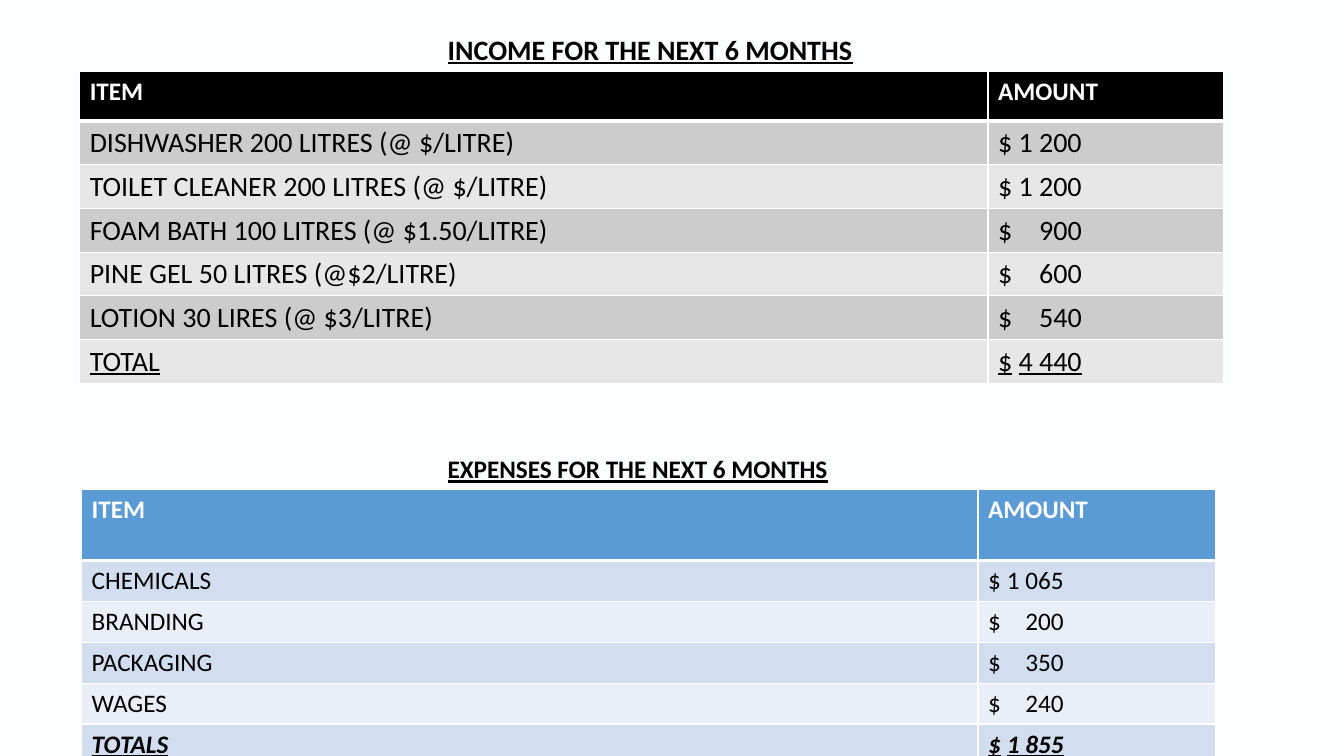
import pptx
import pptx.util
import pptx.dml.color
import pptx.enum.text
import pptx.oxml
import pptx.oxml.ns

COLORS = {
    "page": "FBFDFE", "text": "000000", "white": "FFFFFF",
    "income": ("000000", "CCCCCC", "E7E7E7"),
    "expenses": ("5B9BD5", "D2DEEF", "EAEFF7"),
}
FONT = "Calibri"
INCOME = [
    ("DISHWASHER 200 LITRES (@ $/LITRE)", "1 200"),
    ("TOILET CLEANER 200 LITRES (@ $/LITRE)", "1 200"),
    ("FOAM BATH 100 LITRES (@ $1.50/LITRE)", "900"),
    ("PINE GEL 50 LITRES (@$2/LITRE)", "600"),
    ("LOTION 30 LIRES (@ $3/LITRE)", "540"),
    ("TOTAL", "4 440"),
]
EXPENSES = [
    ("CHEMICALS", "1 065"),
    ("BRANDING", "200"),
    ("PACKAGING", "350"),
    ("WAGES", "240"),
    ("TOTALS", "1 855"),
]


def inches(*values):
    return [pptx.util.Inches(v) for v in values]


def rgb(value):
    return pptx.dml.color.RGBColor.from_string(value)


def set_font(p, size, color, bold=False, italic=False, underline=False):
    f = p.font
    f.name, f.size = FONT, pptx.util.Pt(size)
    f.bold, f.italic, f.underline = bold, italic, underline
    f.color.rgb = rgb(color)


def add_xml(parent, xml, index=None):
    declared = xml.replace(" ", " " + pptx.oxml.ns.nsdecls("a") + " ", 1)
    element = pptx.oxml.parse_xml(declared)
    parent.insert(len(parent) if index is None else index, element)


def add_heading(sp, box, text, size):
    """Put an underlined heading in the given shape and box."""
    sp.left, sp.top, sp.width, sp.height = inches(*box)
    tf = sp.text_frame
    tf.word_wrap = True
    tf.auto_size = pptx.enum.text.MSO_AUTO_SIZE.SHAPE_TO_FIT_TEXT
    tf.vertical_anchor = pptx.enum.text.MSO_ANCHOR.TOP
    p = tf.paragraphs[0]
    p.text = text
    p.alignment = pptx.enum.text.PP_ALIGN.LEFT
    p.line_spacing = 1.0
    p.space_before = pptx.util.Pt(0)
    set_font(p, size, COLORS["text"], bold=True, underline=True)


def style_cell(cell, fill, is_header):
    """Fill a cell and rule it in white, heavier below the header."""
    tc_pr = cell._tc.get_or_add_tcPr()
    for side in ("lnL", "lnR", "lnT", "lnB"):
        points = 3 if is_header and side == "lnB" else 1
        add_xml(tc_pr, f'<a:{side} w="{pptx.util.Pt(points)}"><a:solidFill>'
                       f'<a:srgbClr val="{COLORS["white"]}"/></a:solidFill></a:{side}>')
    cell.fill.solid()
    cell.fill.fore_color.rgb = rgb(fill)


def add_budget_table(s, box, rows, palette, amount_width, header_height,
                     size, tab, total_style):
    """Place a header, banded items and a total inside the box."""
    left, top, width, height = box
    table = s.shapes.add_table(len(rows) + 1, 2, *inches(*box)).table
    table.first_row = table.horz_banding = False
    table.columns[0].width, table.columns[1].width = inches(
        width - amount_width, amount_width)
    header_fill, *bands = palette
    row_height = (height - header_height) / len(rows)
    lines = [("ITEM", "AMOUNT")] + [(item, "$\t" + amount) for item, amount in rows]
    for i, line in enumerate(lines):
        is_header = i == 0
        table.rows[i].height = pptx.util.Inches(header_height if is_header else row_height)
        for j, text in enumerate(line):
            cell = table.cell(i, j)
            style_cell(cell, header_fill if is_header else bands[(i - 1) % 2], is_header)
            p = cell.text_frame.paragraphs[0]
            p.text = text
            if is_header:
                set_font(p, 18, COLORS["white"], bold=True)
                continue
            set_font(p, size, COLORS["text"], **(total_style if i == len(rows) else {}))
            if j == 1:  # right tab lines up the amounts
                add_xml(p._p.get_or_add_pPr(), '<a:tabLst ><a:tab pos="%d" algn="r"/></a:tabLst>'
                        % pptx.util.Inches(tab), 0)


def build_budget_slide(prs):
    s = prs.slides.add_slide(prs.slide_layouts[5])
    s.background.fill.solid()
    s.background.fill.fore_color.rgb = rgb(COLORS["page"])

    # Income
    add_budget_table(s, (0.79, 0.71, 11.35, 3.09), INCOME, COLORS["income"],
                     amount_width=2.34, header_height=0.49, size=20, tab=0.83,
                     total_style={"underline": True})
    add_heading(s.shapes.title, (4.34, 0.27, 9.2, 0.44),
                "INCOME FOR THE NEXT 6 MONTHS", 20)

    # Expenses
    add_budget_table(s, (0.81, 4.86, 11.25, 2.73), EXPENSES, COLORS["expenses"],
                     amount_width=2.36, header_height=0.7, size=18, tab=0.75,
                     total_style={"bold": True, "italic": True, "underline": True})
    add_heading(s.shapes.add_textbox(0, 0, 0, 0), (4.34, 4.45, 7.25, 0.4),
                "EXPENSES FOR THE NEXT 6 MONTHS", 18)


def main():
    prs = pptx.Presentation()
    prs.slide_width, prs.slide_height = inches(13.33, 7.5)
    build_budget_slide(prs)
    prs.save("out.pptx")


if __name__ == "__main__":
    main()
